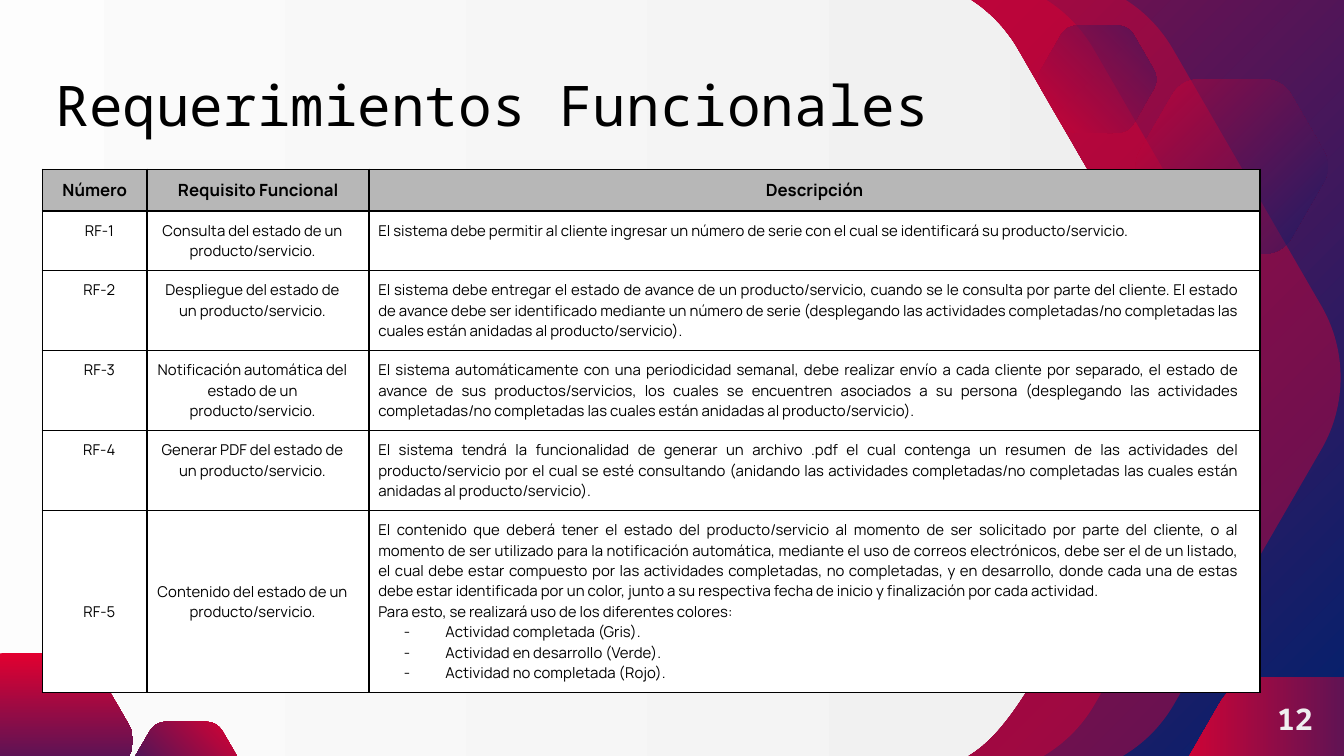
from lxml.etree import SubElement
from pptx import Presentation
from pptx.dml.color import RGBColor
from pptx.enum.text import MSO_ANCHOR, PP_ALIGN
from pptx.oxml.ns import qn
from pptx.util import Inches, Pt

COLORS = {
    "red": "E20030", "blue": "00216E", "white": "FFFFFF",
    "pale": "EFEFEF", "gray": "B7B7B7", "black": "000000",
}
MONO, SANS = "Noto Sans Mono", "Manrope"

presentation = Presentation()
presentation.slide_width = Inches(10)
presentation.slide_height = presentation.slide_width * 9 // 16
slide = presentation.slides.add_slide(presentation.slide_layouts[6])

# One column and one row are a hundredth of the slide's width and height
COLUMN = presentation.slide_width / 100
ROW = presentation.slide_height / 100


def paint(fill, element, colors, angle=0, opacity=100):
    """Fill with one colour or a two-colour gradient; angle runs clockwise."""
    if len(colors) == 1:
        fill.solid()
        fill.fore_color.rgb = RGBColor.from_string(COLORS[colors[0]])
    else:
        fill.gradient()
        fill.gradient_angle = -angle % 360
        for stop, color in zip(fill.gradient_stops, colors):
            stop.color.rgb = RGBColor.from_string(COLORS[color])
    if opacity < 100:
        for color in element.iter(qn("a:srgbClr")):
            SubElement(color, qn("a:alpha"), val=str(opacity * 1000))


def write(frame, lines, font=SANS, size=8, color="black", bold=False,
          align=PP_ALIGN.LEFT, anchor=MSO_ANCHOR.TOP):
    """Write one paragraph a line; lines that start with a dash are bulleted."""
    frame.word_wrap = True
    frame.vertical_anchor = anchor
    for index, line in enumerate(lines):
        paragraph = frame.add_paragraph() if index else frame.paragraphs[0]
        paragraph.alignment = align
        run = paragraph.add_run()
        run.text = line.removeprefix("- ")
        run.font.name, run.font.size, run.font.bold = font, Pt(size), bold
        run.font.color.rgb = RGBColor.from_string(COLORS[color])
        if line.startswith("- "):
            properties = paragraph._p.get_or_add_pPr()
            properties.set("marL", str(Inches(0.5)))
            properties.set("indent", str(Inches(-0.31)))
            SubElement(properties, qn("a:buFont"), typeface=font)
            SubElement(properties, qn("a:buChar"), char="-")


# Background
background = slide.background
paint(background.fill, background._cSld, ("red", "blue"), 45)

# Rounded hexagon outline: single points are corners, triples are curves
OUTLINE_WIDTH, OUTLINE_HEIGHT = 6.61, 5.94
OUTLINE = [
    [(2.2, 0)],
    [(1.82, 0), (1.48, 0.2), (1.29, 0.53)],
    [(0.18, 2.45)],
    [(0, 2.77), (0, 3.17), (0.18, 3.49)],
    [(0.47, 3.96), (0.68, 4.34), (0.85, 4.65)],
    [(1.49, 5.8), (1.57, 5.94), (2.6, 5.94)],
    [(4.41, 5.93)],
    [(4.79, 5.93), (5.13, 5.73), (5.32, 5.41)],
    [(6.43, 3.49)],
    [(6.61, 3.17), (6.61, 2.77), (6.43, 2.45)],
    [(5.32, 0.53)],
    [(5.13, 0.2), (4.79, 0), (4.41, 0)],
]

# Hexagons: left, top, width, height, mirrored, colours, angle, opacity
RED_BLUE = ("red", "blue")
HEXAGONS = [
    (34.1, -2.84, 66.1, 105.6, False, ("red",), 0, 41),
    (28.2, -2.84, 66.1, 105.6, False, ("red",), 0, 41),
    (-19.2, -2.84, 107.8, 105.6, True, ("white", "pale"), 0, 100),
    (86.1, 89.6, 24, 38.22, False, RED_BLUE, 0, 100),
    (84.4, 10.49, 14.5, 23.11, False, RED_BLUE, 45, 41),
    (77.2, 3.38, 8.9, 14.22, True, RED_BLUE, 315, 42),
    (83, 68.1, 7.3, 11.73, False, ("blue", "red"), 90, 22),
    (-4.5, 86.4, 14.5, 23.11, False, RED_BLUE, 90, 100),
    (9.4, 95.47, 8.9, 14.22, True, RED_BLUE, 135, 100),
]
for left, top, width, height, mirrored, colors, angle, opacity in HEXAGONS:
    # Start from the bounding rectangle, then put the curved outline in it
    right, bottom = (left + width) * COLUMN, (top + height) * ROW
    builder = slide.shapes.build_freeform(left * COLUMN, top * ROW)
    builder.add_line_segments([(right, top * ROW), (right, bottom),
                               (left * COLUMN, bottom)])
    hexagon = builder.convert_to_shape()
    outline = next(hexagon._element.iter(qn("a:path")))
    for command in list(outline):
        outline.remove(command)
    scale = height * ROW / OUTLINE_HEIGHT
    stretch = width * COLUMN - OUTLINE_WIDTH * scale
    for index, segment in enumerate(OUTLINE):
        tag = "cubicBezTo" if len(segment) == 3 else "lnTo" if index else "moveTo"
        command = SubElement(outline, qn(f"a:{tag}"))
        for x, y in segment:
            if mirrored:
                x = OUTLINE_WIDTH - x
            # Only the flat middle stretches, so the corners keep their shape
            shift = stretch if x > OUTLINE_WIDTH / 2 else 0
            SubElement(command, qn("a:pt"), x=str(round(x * scale + shift)),
                       y=str(round(y * scale)))
    SubElement(outline, qn("a:close"))
    hexagon.shadow.inherit = False
    hexagon.line.fill.background()
    paint(hexagon.fill, hexagon._element.spPr, colors, angle, opacity)

# Title and slide number
LABELS = [
    ("Requerimientos Funcionales", (3.15, 8.53, 84.4, 10.49),
     dict(size=30)),
    ("12", (92.7, 89.6, 7.3, 11.02),
     dict(size=16, color="pale", bold=True, align=PP_ALIGN.CENTER)),
]
for text, (left, top, width, height), style in LABELS:
    box = slide.shapes.add_textbox(int(left * COLUMN), int(top * ROW),
                                   int(width * COLUMN), int(height * ROW))
    frame = box.text_frame
    frame.margin_left = frame.margin_right = Inches(0.1)
    frame.margin_top = frame.margin_bottom = Inches(0.1)
    write(frame, [text], font=MONO, anchor=MSO_ANCHOR.MIDDLE, **style)

# Requirements table
REQUIREMENTS = [
    ("Número", "Requisito Funcional", ["Descripción"]),
    ("RF-1", "Consulta del estado de un producto/servicio.", [
        "El sistema debe permitir al cliente ingresar un número de serie con el cual se identificará su producto/servicio."]),
    ("RF-2", "Despliegue del estado de un producto/servicio.", [
        "El sistema debe entregar el estado de avance de un producto/servicio, cuando se le consulta por parte del cliente. El estado de avance debe ser identificado mediante un número de serie (desplegando las actividades completadas/no completadas las cuales están anidadas al producto/servicio)."]),
    ("RF-3", "Notificación automática del estado de un producto/servicio.", [
        "El sistema automáticamente con una periodicidad semanal, debe realizar envío a cada cliente por separado, el estado de avance de sus productos/servicios, los cuales se encuentren asociados a su persona (desplegando las actividades completadas/no completadas las cuales están anidadas al producto/servicio)."]),
    ("RF-4", "Generar PDF del estado de un producto/servicio.", [
        "El sistema tendrá la funcionalidad de generar un archivo .pdf el cual contenga un resumen de las actividades del producto/servicio por el cual se esté consultando (anidando las actividades completadas/no completadas las cuales están anidadas al producto/servicio)."]),
    ("RF-5", "Contenido del estado de un producto/servicio.", [
        "El contenido que deberá tener el estado del producto/servicio al momento de ser solicitado por parte del cliente, o al momento de ser utilizado para la notificación automática, mediante el uso de correos electrónicos, debe ser el de un listado, el cual debe estar compuesto por las actividades completadas, no completadas, y en desarrollo, donde cada una de estas debe estar identificada por un color, junto a su respectiva fecha de inicio y finalización por cada actividad.",
        "Para esto, se realizará uso de los diferentes colores:",
        "- Actividad completada (Gris).",
        "- Actividad en desarrollo (Verde).",
        "- Actividad no completada (Rojo)."]),
]
COLUMN_WIDTHS = [7.8, 16.5, 66.3]
ROW_HEIGHTS = [5.5, 7.87, 10.58, 10.58, 10.58, 24.1]
PADDING = 0.07
LAST_ROW_DROP = (0.61, 0.46, 0)  # extra space above the last row's texts

table = slide.shapes.add_table(
    len(ROW_HEIGHTS), len(COLUMN_WIDTHS), int(3.15 * COLUMN), int(22.42 * ROW),
    int(sum(COLUMN_WIDTHS) * COLUMN), int(sum(ROW_HEIGHTS) * ROW)).table
table.first_row = table.horz_banding = False
for table_column, width in zip(table.columns, COLUMN_WIDTHS):
    table_column.width = int(width * COLUMN)
for table_row, height in zip(table.rows, ROW_HEIGHTS):
    table_row.height = int(height * ROW)

for row, (number, name, description) in enumerate(REQUIREMENTS):
    header, last = row == 0, row == len(REQUIREMENTS) - 1
    for column, lines in enumerate(([number], [name], description)):
        cell = table.cell(row, column)
        for side in ("lnL", "lnR", "lnT", "lnB"):
            border = SubElement(cell._tc.get_or_add_tcPr(), qn(f"a:{side}"), w=str(Pt(1)))
            border_fill = SubElement(border, qn("a:solidFill"))
            SubElement(border_fill, qn("a:srgbClr"), val=COLORS["black"])
        paint(cell.fill, cell._tc, ("gray" if header else "white",))
        indented = column == 0 and not header
        cell.margin_left = Inches(PADDING + 0.15 * indented)
        cell.margin_right = Inches(PADDING if header else PADDING + 0.08)
        cell.margin_top = Inches(PADDING + LAST_ROW_DROP[column] * last)
        cell.margin_bottom = Inches(PADDING)
        justified = column == 2 and not header
        write(cell.text_frame, lines, size=9 if header else 8, bold=header,
              align=PP_ALIGN.JUSTIFY if justified else PP_ALIGN.CENTER)

presentation.save("out.pptx")
